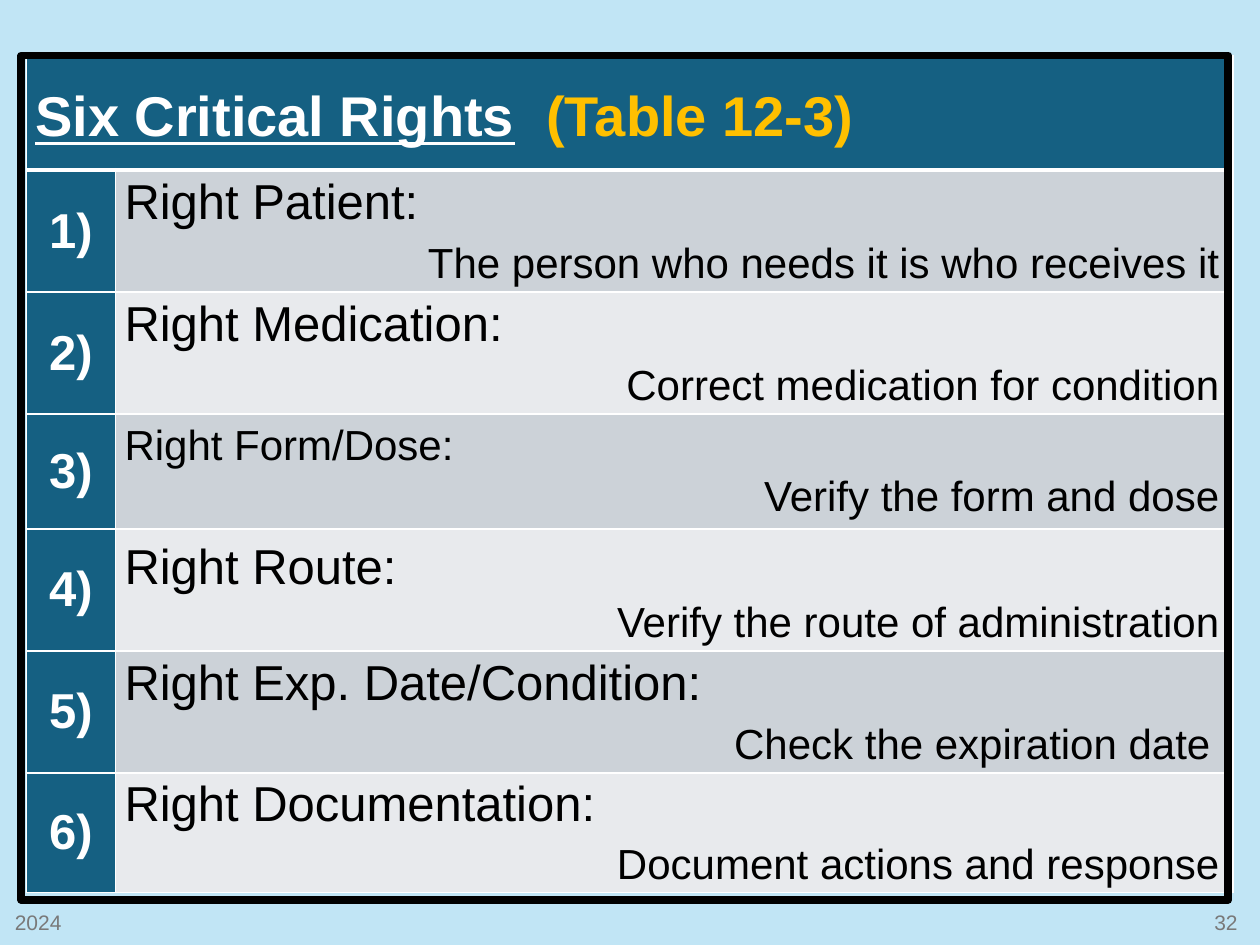
from lxml.etree import SubElement
from pptx import Presentation
from pptx.dml.color import RGBColor
from pptx.enum.shapes import MSO_SHAPE as Shape
from pptx.enum.text import MSO_ANCHOR as Anchor, PP_ALIGN as Align
from pptx.oxml import parse_xml
from pptx.oxml.ns import nsdecls, qn
from pptx.util import Cm, Pt

COLORS = {
    "background": "C1E5F5",
    "accent": "156082",
    "odd": "CCD2D8",
    "even": "E8EAED",
    "white": "FFFFFF",
    "black": "000000",
    "gold": "FFC000",
    "footer": "797979",
}
FONT = "Arial"
NUMBER_WIDTH = 1.8
HEADER_HEIGHT = 2.31
SIDE_MARGIN = 0.18

# title, title size, answer, row height, top margin, right margin, gap (pt)
RIGHTS = [
    ("Right Patient:", 28, "The person who needs it is who receives it", 2.46, 0, 0.28, 4),
    ("Right Medication:", 28, "Correct medication for condition", 2.46, 0, 0.28, 4),
    ("Right Form/Dose:", 24, "Verify the form and dose", 2.31, 0, 0.28, 0),
    ("Right Route:", 28, "Verify the route of administration", 2.46, 0.14, 0.28, 1),
    ("Right Exp. Date/Condition:", 28, "Check the expiration date", 2.46, 0, 0.46, 4),
    ("Right Documentation:", 28, "Document actions and response", 2.29, 0, 0.28, 4),
]


def color(name):
    return RGBColor.from_string(COLORS[name])


def format_paragraph(paragraph, size, color_name, bold=False, align=Align.LEFT):
    font = paragraph.font
    font.name, font.size, font.bold = FONT, Pt(size), bold
    font.color.rgb = color(color_name)
    paragraph.alignment = align


def set_borders(cell, bottom=1):
    """Draw white cell borders; bottom is the lower border's width in points."""
    properties = cell._tc.get_or_add_tcPr()
    for index, (side, width) in enumerate(zip("LRTB", (1, 1, 1, bottom))):
        border = parse_xml(f'<a:ln{side} {nsdecls("a")} w="{Pt(width)}"/>')
        fill = SubElement(border, qn("a:solidFill"))
        SubElement(fill, qn("a:srgbClr"), val=COLORS["white"])
        properties.insert(index, border)


def style_cell(cell, fill, top=0, right=SIDE_MARGIN, bottom_border=1):
    cell.fill.solid()
    cell.fill.fore_color.rgb = color(fill)
    cell.vertical_anchor = Anchor.MIDDLE
    cell.margin_left, cell.margin_right = Cm(SIDE_MARGIN), Cm(right)
    cell.margin_top, cell.margin_bottom = Cm(top), Cm(0)
    set_borders(cell, bottom_border)


def fill_header(cell):
    paragraph = cell.text_frame.paragraphs[0]
    format_paragraph(paragraph, 32, "white", bold=True)
    paragraph.line_spacing = 1.15
    paragraph.space_after = Pt(3)
    title, gap, reference = (paragraph.add_run() for _ in range(3))
    title.text, gap.text, reference.text = "Six Critical Rights", " ", "(Table 12-3)"
    title.font.underline = True
    gap.font._element.set("spc", "890")  # widens the gap to two spaces
    reference.font.color.rgb = color("gold")


def fill_right(cell, title, title_size, answer, gap):
    frame = cell.text_frame
    frame.text = f"{title}\n{answer}"
    first, second = frame.paragraphs
    format_paragraph(first, title_size, "black")
    format_paragraph(second, 24, "black", align=Align.RIGHT)
    first.space_after = second.space_after = Pt(2)
    second.space_before = Pt(gap)


def add_rights_table(slide, left, top, width):
    height = HEADER_HEIGHT + sum(right[3] for right in RIGHTS)
    table = slide.shapes.add_table(
        len(RIGHTS) + 1, 2, Cm(left), Cm(top), Cm(width), Cm(height)).table
    table.columns[0].width = Cm(NUMBER_WIDTH)
    table.columns[1].width = Cm(width - NUMBER_WIDTH)
    table.rows[0].height = Cm(HEADER_HEIGHT)
    header = table.cell(0, 0)
    header.merge(table.cell(0, 1))
    for column in range(2):
        style_cell(table.cell(0, column), "accent", bottom_border=3)
    fill_header(header)

    for row, (title, size, answer, row_height, top_margin, right_margin, gap) in enumerate(RIGHTS, 1):
        table.rows[row].height = Cm(row_height)
        number, content = table.cell(row, 0), table.cell(row, 1)
        style_cell(number, "accent")
        number.text = f"{row})"
        paragraph = number.text_frame.paragraphs[0]
        format_paragraph(paragraph, 28, "white", bold=True, align=Align.CENTER)
        paragraph.space_after = Pt(2)
        style_cell(content, "odd" if row % 2 else "even", top_margin, right_margin)
        fill_right(content, title, size, answer, gap)


def add_frame(slide, left, top, width, height):
    frame = slide.shapes.add_shape(Shape.RECTANGLE, Cm(left), Cm(top), Cm(width), Cm(height))
    frame.shadow.inherit = False
    frame.fill.background()
    frame.line.color.rgb = color("black")
    frame.line.width = Pt(4.5)


def add_footer(slide, left, top, width, height):
    """Place the year at the left end and the slide number at the right end."""
    box_width = 5.72
    items = (("2024", left, Align.LEFT), ("32", left + width - box_width, Align.RIGHT))
    for text, box_left, align in items:
        box = slide.shapes.add_textbox(Cm(box_left), Cm(top), Cm(box_width), Cm(height))
        frame = box.text_frame
        frame.word_wrap = True
        frame.vertical_anchor = Anchor.MIDDLE
        frame.text = text
        format_paragraph(frame.paragraphs[0], 12, "footer", align=align)


def main():
    presentation = Presentation()
    presentation.slide_width, presentation.slide_height = Cm(25.4), Cm(19.05)
    slide = presentation.slides.add_slide(presentation.slide_layouts[6])
    slide.background.fill.solid()
    slide.background.fill.fore_color.rgb = color("background")
    add_footer(slide, 0.05, 18.34, 25.15, 0.51)
    add_rights_table(slide, 0.53, 1.12, 24.33)
    add_frame(slide, 0.43, 1.12, 24.33, 17.02)
    presentation.save("out.pptx")


if __name__ == "__main__":
    main()
